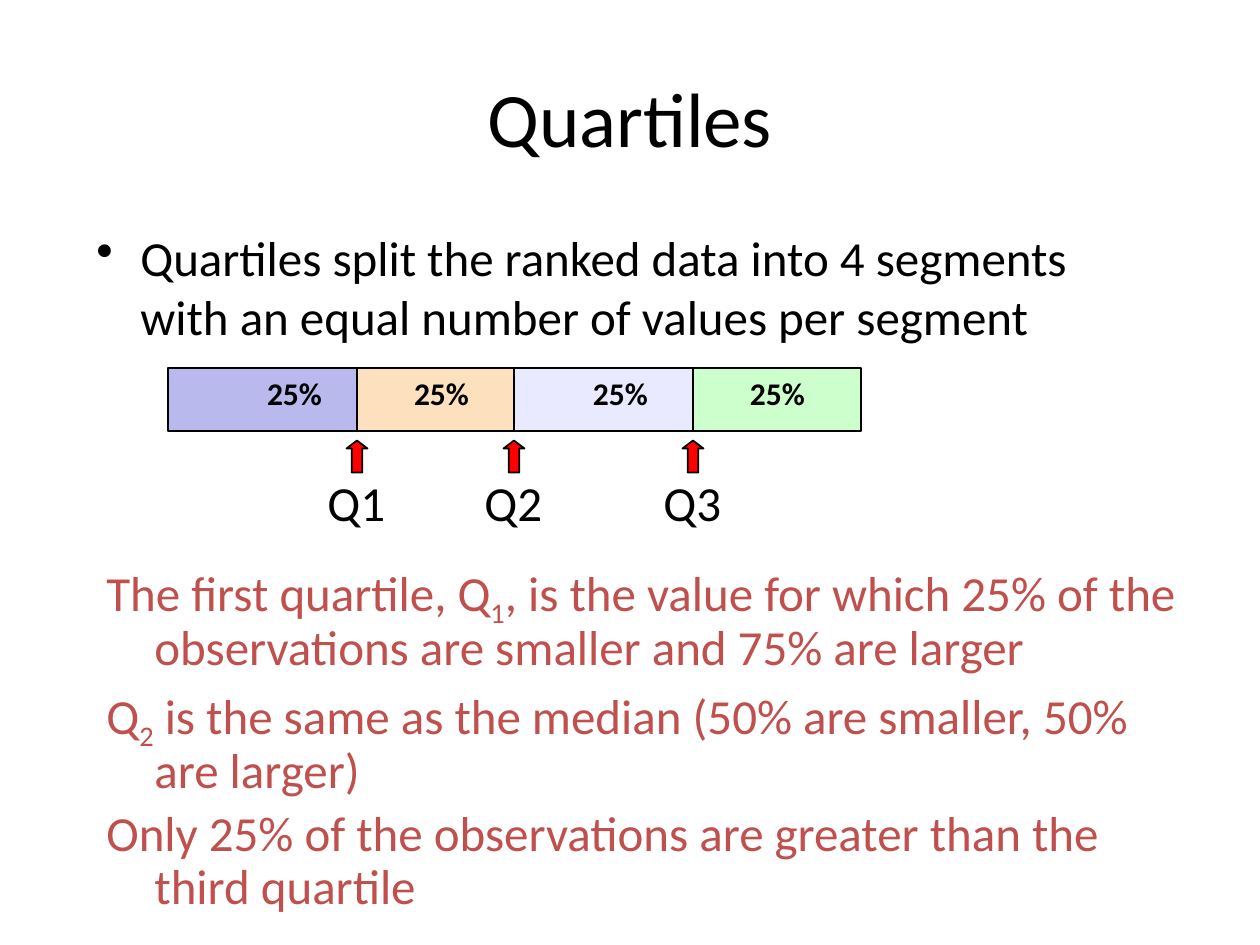
"""Build the slide that explains quartiles with a segmented bar."""

from dataclasses import dataclass

from lxml import etree
from pptx import Presentation
from pptx.dml.color import RGBColor
from pptx.enum.shapes import MSO_SHAPE
from pptx.enum.text import MSO_ANCHOR, PP_ALIGN
from pptx.oxml.ns import qn
from pptx.util import Emu, Pt

RECTANGLE = MSO_SHAPE.RECTANGLE
ARROW = MSO_SHAPE.RIGHT_ARROW
CENTER = PP_ALIGN.CENTER
LEFT = PP_ALIGN.LEFT
TOP = MSO_ANCHOR.TOP
MIDDLE = MSO_ANCHOR.MIDDLE

PX_PER_INCH = 126
EMU_PER_PX = 914400 / PX_PER_INCH
BAR_TOP, BAR_HEIGHT = 368, 63
ARROW_TOP, ARROW_LENGTH, ARROW_BREADTH = 446, 32, 21


@dataclass(frozen=True)
class Theme:
    font: str = "Calibri"
    ink: str = "000000"
    accent: str = "C0504D"
    arrow: str = "FF0000"
    title_size: int = 44
    body_size: int = 28
    label_size: int = 18
    outline: int = 1


@dataclass(frozen=True)
class Box:
    left: int
    top: int
    width: int
    height: int

    def emu(self) -> list[Emu]:
        """Return left, top, width and height in EMU."""
        return [px(value) for value in (self.left, self.top, self.width, self.height)]


@dataclass(frozen=True)
class Segment:
    left: int
    width: int
    fill: str
    label_left: int


@dataclass(frozen=True)
class Style:
    size: int
    color: str = "000000"
    bold: bool = False
    align: PP_ALIGN = LEFT
    anchor: MSO_ANCHOR = TOP
    hanging: int = 0
    line_spacing: float = 1.0
    bullet: str = ""


THEME = Theme()
TITLE = Style(THEME.title_size, align=CENTER, anchor=MIDDLE)
BULLET = Style(THEME.body_size, hanging=44, bullet="•")
LABEL = Style(THEME.label_size, bold=True, align=CENTER)
QUARTILE = Style(THEME.body_size, line_spacing=0.9)
NOTES = Style(THEME.body_size, color=THEME.accent, hanging=48, line_spacing=0.9)

SEGMENTS = [
    Segment(168, 221, "B9B9ED", 231),
    Segment(357, 179, "FDE0BD", 378),
    Segment(514, 242, "E9E9FF", 557),
    Segment(693, 168, "CCFFCC", 714),
]
INTRO = "Quartiles split the ranked data into 4 segments with an equal number of values per segment"
EXPLANATIONS = [
    ["The first quartile, Q", "1",
     ", is the value for which 25% of the observations are smaller and 75% are larger"],
    ["Q", "2", " is the same as the median (50% are smaller, 50% are larger)"],
    ["Only 25% of the observations are greater than the third quartile"],
]


def px(value: int) -> Emu:
    """Turn pixels into EMU."""
    return Emu(round(value * EMU_PER_PX))


def add_text(page, box: Box, paragraphs: list[list[str]], style: Style) -> None:
    """Write paragraphs whose every second span is a subscript."""
    frame = page.shapes.add_textbox(*box.emu()).text_frame
    frame.word_wrap = True
    frame.vertical_anchor = style.anchor
    for index, spans in enumerate(paragraphs):
        para = frame.add_paragraph() if index else frame.paragraphs[0]
        para.alignment = style.align
        para.line_spacing = style.line_spacing
        para.space_before = Pt(style.size * 0.2 if index else 0)
        font = para.font
        font.name, font.size, font.bold = THEME.font, Pt(style.size), style.bold
        font.color.rgb = RGBColor.from_string(style.color)
        properties = para._p.get_or_add_pPr()
        properties.set("marL", str(px(style.hanging)))
        properties.set("indent", str(-px(style.hanging)))
        if style.bullet:
            bullet = etree.Element(qn("a:buChar"), char=style.bullet)
            properties.find(qn("a:defRPr")).addprevious(bullet)
        for position, text in enumerate(spans):
            span = para.add_run()
            span.text = text
            if position % 2:
                span._r.get_or_add_rPr().set("baseline", "-25000")


def add_figure(page, kind: MSO_SHAPE, box: Box, fill: str):
    """Draw a filled shape with a thin dark outline."""
    shape = page.shapes.add_shape(kind, *box.emu())
    shape.shadow.inherit = False
    shape.fill.solid()
    shape.fill.fore_color.rgb = RGBColor.from_string(fill)
    shape.line.color.rgb = RGBColor.from_string(THEME.ink)
    shape.line.width = Pt(THEME.outline)
    return shape


def add_quartile(page, center: int, name: str) -> None:
    """Mark a segment boundary with an upward arrow and its name."""
    box = Box(center - ARROW_LENGTH // 2, ARROW_TOP, ARROW_LENGTH, ARROW_BREADTH)
    arrow = add_figure(page, ARROW, box, THEME.arrow)
    arrow.rotation = 270
    arrow.adjustments[0], arrow.adjustments[1] = 0.5, 0.38
    add_text(page, Box(center - 42, 473, 120, 63), [[name]], QUARTILE)


def main() -> None:
    """Compose and save the slide."""
    deck = Presentation()
    deck.slide_width, deck.slide_height = px(1260), px(945)
    page = deck.slides.add_slide(deck.slide_layouts[6])
    add_text(page, Box(63, 38, 1134, 158), [["Quartiles"]], TITLE)
    add_text(page, Box(84, 221, 1029, 131), [[INTRO]], BULLET)
    for segment in SEGMENTS:
        box = Box(segment.left, BAR_TOP, segment.width, BAR_HEIGHT)
        add_figure(page, RECTANGLE, box, segment.fill)
    for segment in SEGMENTS:
        add_text(page, Box(segment.label_left, BAR_TOP, 127, BAR_HEIGHT), [["25%"]], LABEL)
    for number, segment in enumerate(SEGMENTS[1:], start=1):
        add_quartile(page, segment.left, f"Q{number}")
    add_text(page, Box(94, 557, 1116, 305), EXPLANATIONS, NOTES)
    deck.save("out.pptx")


if __name__ == "__main__":
    main()
